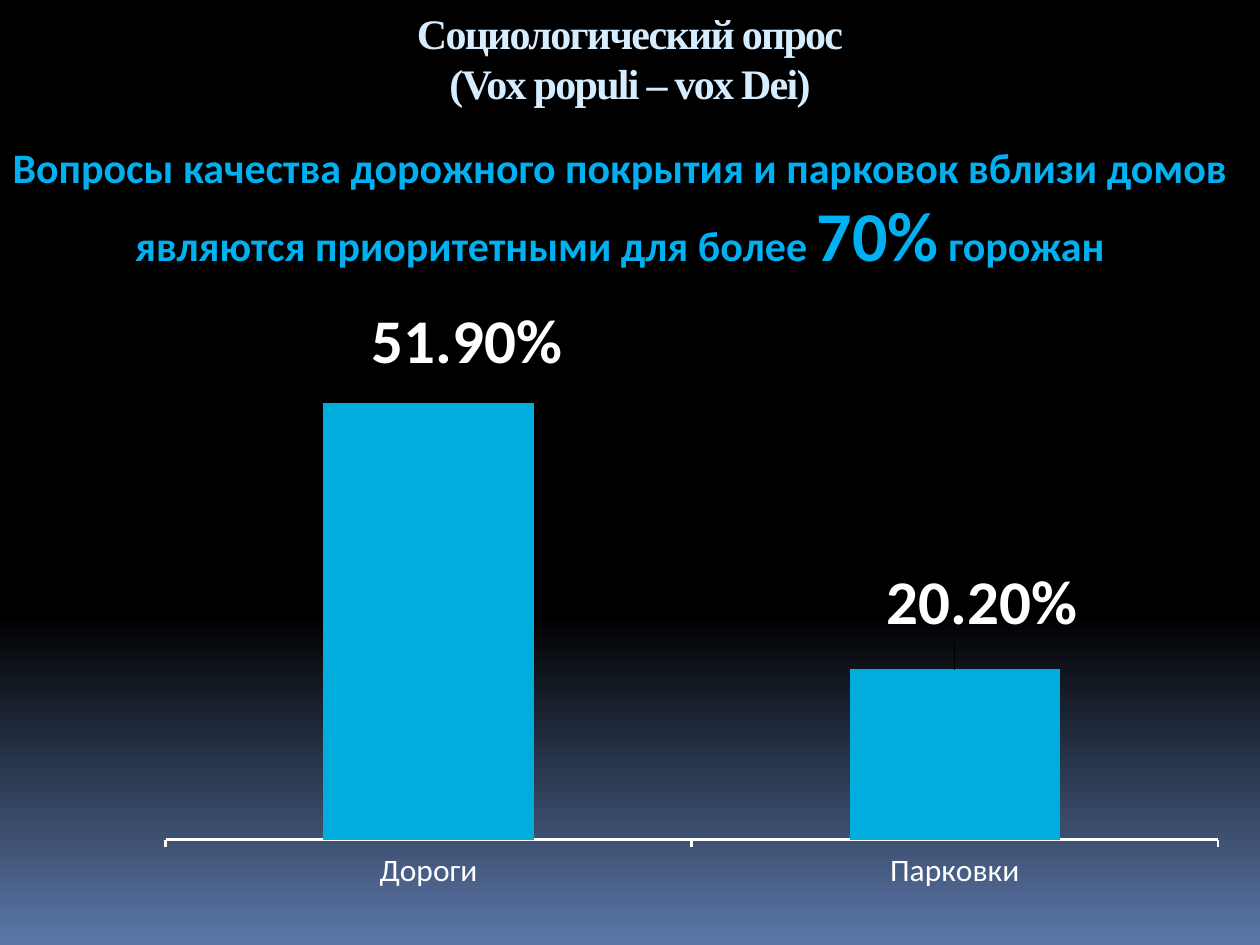
"""Build the survey slide with a column chart of residents' priorities."""
from copy import deepcopy
from dataclasses import dataclass

from lxml.etree import SubElement
from pptx import Presentation
from pptx.chart.data import CategoryChartData
from pptx.dml.color import RGBColor
from pptx.enum.chart import XL_CHART_TYPE as ChartType, XL_LABEL_POSITION as LabelPosition
from pptx.enum.chart import XL_TICK_LABEL_POSITION as TickLabels, XL_TICK_MARK as TickMark
from pptx.enum.text import MSO_ANCHOR as Anchor, PP_ALIGN as Align
from pptx.oxml import parse_xml
from pptx.oxml.ns import nsdecls, qn
from pptx.util import Inches, Pt

WHITE, BLUE, PALE, BAR = "FFFFFF", "00B0F0", "D6ECFF", "00ADDC"


@dataclass
class Column:
    name: str
    share: float
    label_dx: float
    label_dy: float


@dataclass
class Phrase:
    text: str
    size: int


COLUMNS = [Column("Дороги", 0.519, 0.035, -0.03), Column("Парковки", 0.202, 0.025, -0.04)]
STATEMENT = [
    Phrase("Вопросы качества дорожного покрытия и парковок вблизи домов "
           "являются приоритетными для более ", 24),
    Phrase("70%", 40),
    Phrase(" горожан", 24),
]


def color(value: str) -> RGBColor:
    return RGBColor.from_string(value)


def style_font(font, name: str, size: int, value: str, bold: bool) -> None:
    font.name, font.size, font.bold = name, Pt(size), bold
    font.color.rgb = color(value)


def place(shape, left: float, top: float, width: float, height: float) -> None:
    shape.left, shape.top = Inches(left), Inches(top)
    shape.width, shape.height = Inches(width), Inches(height)


def layout_xml(x: float, y: float, extra: str = ""):
    return parse_xml(
        f'<c:layout {nsdecls("c")}><c:manualLayout>{extra}'
        f'<c:x val="{x}"/><c:y val="{y}"/></c:manualLayout></c:layout>')


def paint_background(slide) -> None:
    fill = slide.background.fill
    fill.gradient()
    fill.gradient_angle = 270
    stops = next(slide.element.iter(qn("a:gsLst")))
    stops.insert(1, deepcopy(stops[0]))
    for stop, (position, value) in zip(
            fill.gradient_stops, [(0, "000000"), (0.65, "000000"), (1, "5B77A8")]):
        stop.position = position
        stop.color.rgb = color(value)


def add_title(slide) -> None:
    title = slide.shapes.title
    place(title, 0.5, 0, 9, 0.92)
    title.text_frame.vertical_anchor = Anchor.MIDDLE
    paragraph = title.text_frame.paragraphs[0]
    paragraph.alignment = Align.CENTER
    for index, line in enumerate(["Социологический опрос", "(Vox populi – vox Dei)"]):
        if index:
            paragraph.add_line_break()
        run = paragraph.add_run()
        run.text = line
        style_font(run.font, "Times New Roman", 24, PALE, True)
        run.font._element.set("spc", "-100")


def add_statement(slide) -> None:
    box = slide.shapes.add_textbox(0, Inches(1.07), Inches(9.84), Inches(0.52))
    box.text_frame.word_wrap = True
    paragraph = box.text_frame.paragraphs[0]
    paragraph.alignment = Align.CENTER
    for phrase in STATEMENT:
        run = paragraph.add_run()
        run.text = phrase.text
        style_font(run.font, "Calibri", phrase.size, BLUE, True)


def add_column_chart(slide) -> None:
    data = CategoryChartData(number_format="0.00%")
    data.categories = [column.name for column in COLUMNS]
    data.add_series("Series 1", [column.share for column in COLUMNS])
    chart = slide.shapes.add_chart(
        ChartType.COLUMN_CLUSTERED, Inches(1.14), Inches(2.41), Inches(8.7), Inches(4.72),
        data).chart
    chart.has_legend = chart.has_title = False
    style_font(chart.font, "Calibri", 18, WHITE, False)

    values = chart.value_axis
    values.minimum_scale, values.maximum_scale = 0, 0.6
    values.has_major_gridlines = values.visible = False
    categories = chart.category_axis
    categories.major_tick_mark = TickMark.OUTSIDE
    categories.tick_label_position = TickLabels.LOW
    categories.format.line.color.rgb = color(WHITE)
    categories.format.line.width = Pt(1.5)

    plot = chart.plots[0]
    plot.gap_width, plot.vary_by_categories = 150, False
    series = plot.series[0]
    series.format.fill.solid()
    series.format.fill.fore_color.rgb = color(BAR)
    labels = series.data_labels
    labels.show_value = True
    labels.number_format, labels.number_format_is_linked = "0.00%", False
    labels.position = LabelPosition.OUTSIDE_END
    style_font(labels.font, "Calibri", 36, WHITE, True)
    for index, column in enumerate(COLUMNS):
        label = series.points[index].data_label
        label.position = LabelPosition.OUTSIDE_END
        style_font(label.font, "Calibri", 36, WHITE, True)
    for element, column in zip(series._element.iter(qn("c:dLbl")), COLUMNS):
        element.insert(1, layout_xml(column.label_dx, column.label_dy))

    area = chart._chartSpace.chart.plotArea
    for old in area.findall(qn("c:layout")):
        area.remove(old)
    layout = layout_xml(0.02, 0.04, '<c:layoutTarget val="inner"/>'
                        '<c:xMode val="edge"/><c:yMode val="edge"/>')
    for tag, size in [("c:w", "0.96"), ("c:h", "0.86")]:
        SubElement(layout[0], qn(tag)).set("val", size)
    area.insert(0, layout)


def main() -> None:
    presentation = Presentation()
    presentation.slide_width, presentation.slide_height = Inches(10), Inches(7.5)
    slide = presentation.slides.add_slide(presentation.slide_layouts[5])
    paint_background(slide)
    add_title(slide)
    add_column_chart(slide)
    add_statement(slide)
    presentation.save("out.pptx")


if __name__ == "__main__":
    main()
